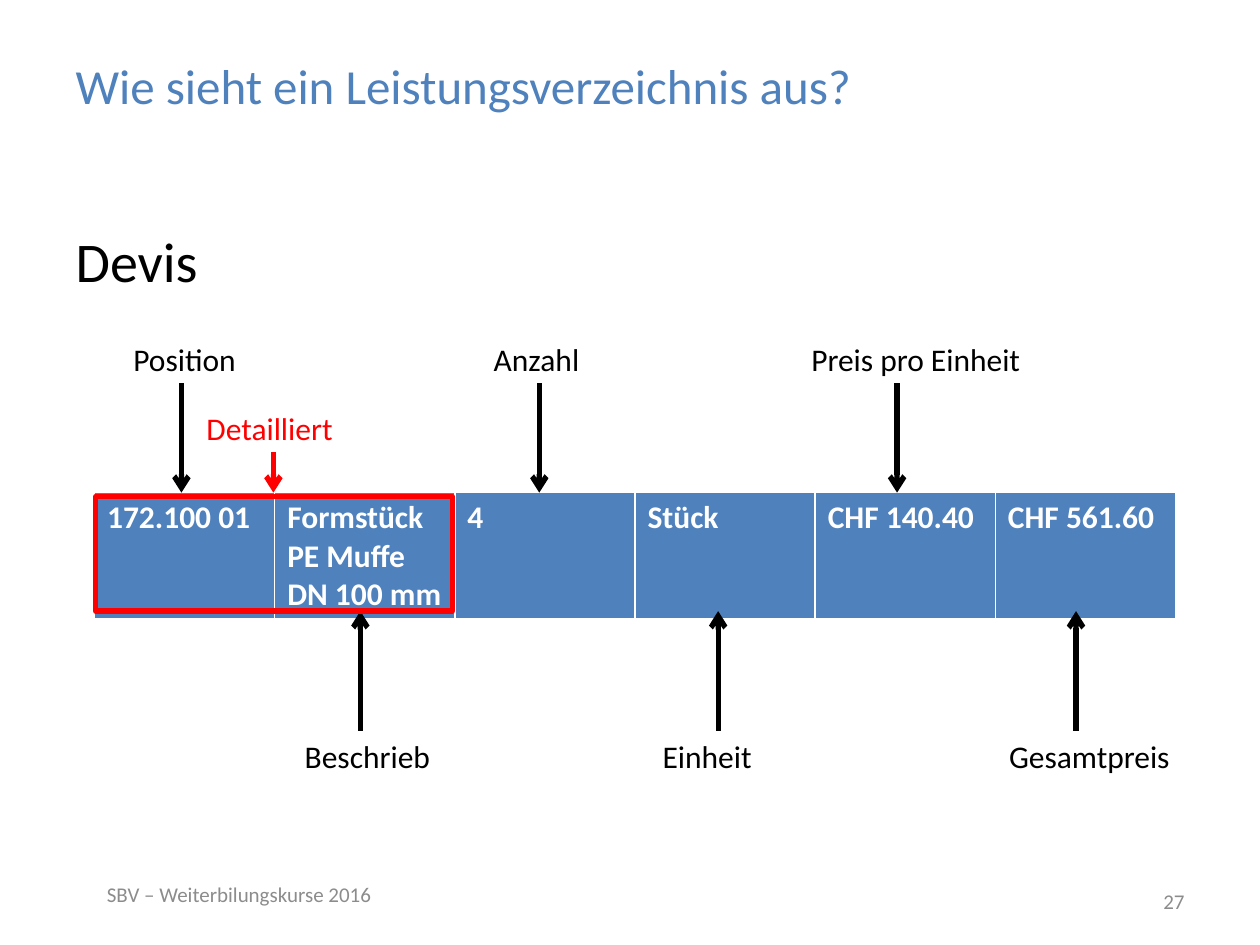
from lxml import etree
from pptx import Presentation
from pptx.dml.color import RGBColor
from pptx.enum.shapes import MSO_CONNECTOR, MSO_SHAPE
from pptx.enum.text import MSO_ANCHOR, PP_ALIGN
from pptx.oxml.ns import qn
from pptx.util import Inches, Pt

STRAIGHT = MSO_CONNECTOR.STRAIGHT
RECTANGLE = MSO_SHAPE.RECTANGLE
MIDDLE = MSO_ANCHOR.MIDDLE
LEFT, RIGHT = PP_ALIGN.LEFT, PP_ALIGN.RIGHT

COLORS = {"blue": "4F81BD", "black": "000000", "gray": "8C8C8C",
          "white": "FFFFFF", "red": "FF0000"}


def write(text_frame, text, size, color, align=LEFT):
    paragraph = text_frame.paragraphs[0]
    paragraph.alignment = align
    run = paragraph.add_run()
    run.text = text
    run.font.name = "Calibri"
    run.font.size = Pt(size)
    run.font.color.rgb = RGBColor.from_string(COLORS[color])
    return run


def add_arrow_label(text, left, top, x, start, end, color):
    """Add a vertical arrow from start to end at x, with its label."""
    arrow = slide.shapes.add_connector(
        STRAIGHT, Inches(x), Inches(start), Inches(x), Inches(end))
    arrow.line.color.rgb = RGBColor.from_string(COLORS[color])
    arrow.line.width = Pt(3)
    etree.SubElement(arrow.line._get_or_add_ln(), qn("a:tailEnd"), type="arrow")
    etree.SubElement(arrow._element.spPr, qn("a:effectLst"))
    label = slide.shapes.add_textbox(
        Inches(left), Inches(top), Inches(2.52), Inches(0.4))
    label.text_frame.word_wrap = True
    write(label.text_frame, text, 18, color)


presentation = Presentation()
presentation.slide_width = Inches(10)
presentation.slide_height = Inches(7.5)
slide = presentation.slides.add_slide(presentation.slide_layouts[1])

# Title and body
title = slide.shapes.title
title.left, title.top = Inches(0.5), Inches(0.05)
title.width, title.height = Inches(9), Inches(1.25)
title.text_frame.vertical_anchor = MIDDLE
write(title.text_frame, "Wie sieht ein Leistungsverzeichnis aus?", 28, "blue")

body = slide.placeholders[1]
body.left, body.top = Inches(0.5), Inches(1.75)
body.width, body.height = Inches(9), Inches(4.95)
write(body.text_frame, "Devis", 32, "black")
body_properties = body.text_frame.paragraphs[0]._p.get_or_add_pPr()
body_properties.set("marL", str(Inches(0.38)))
body_properties.set("indent", str(-Inches(0.38)))
etree.SubElement(body_properties, qn("a:buNone"))
body.text_frame.paragraphs[0].space_before = Pt(0)

# Footer and page number
for text, left, top, align in (
    ("SBV – Weiterbilungskurse 2016", 0.75, 6.9, LEFT),
    ("27", 7.17, 6.95, RIGHT),
):
    footer = slide.shapes.add_textbox(
        Inches(left), Inches(top), Inches(2.33), Inches(0.4))
    footer.text_frame.word_wrap = True
    footer.text_frame.vertical_anchor = MIDDLE
    write(footer.text_frame, text, 12, "gray", align)

# Bill of quantities: one header-style row
entries = ["172.100 01", "Formstück PE Muffe\nDN 100 mm", "4", "Stück",
           "CHF 140.40", "CHF 561.60"]
table = slide.shapes.add_table(
    1, len(entries), Inches(0.75), Inches(3.91), Inches(8.58), Inches(1)).table
table.horz_banding = False
for column, entry in enumerate(entries):
    table.columns[column].width = Inches(1.43)
    cell = table.cell(0, column)
    cell.fill.solid()
    cell.fill.fore_color.rgb = RGBColor.from_string(COLORS["blue"])
    cell.text = entry
    for paragraph in cell.text_frame.paragraphs:
        for run in paragraph.runs:
            run.font.name = "Calibri"
            run.font.size = Pt(18)
            run.font.bold = True
            run.font.color.rgb = RGBColor.from_string(COLORS["white"])

# Column labels, alternating above and below the table
column_labels = [("Position", 0.96), ("Beschrieb", 2.32), ("Anzahl", 3.82),
                 ("Einheit", 5.16), ("Preis pro Einheit", 6.34),
                 ("Gesamtpreis", 7.91)]
for index, (text, left) in enumerate(column_labels):
    top, start, end = (2.65, 3.04, 3.91) if index % 2 == 0 else (5.8, 5.8, 4.85)
    add_arrow_label(text, left, top, 1.44 + 1.42 * index, start, end, "black")

# Highlight around the first two columns
highlight = slide.shapes.add_shape(
    RECTANGLE, Inches(0.76), Inches(3.94), Inches(2.83), Inches(0.91))
highlight.shadow.inherit = False
highlight.fill.background()
highlight.line.color.rgb = RGBColor.from_string(COLORS["red"])
highlight.line.width = Pt(3)
add_arrow_label("Detailliert", 1.54, 3.2, 2.17, 3.59, 3.91, "red")

presentation.save("out.pptx")
